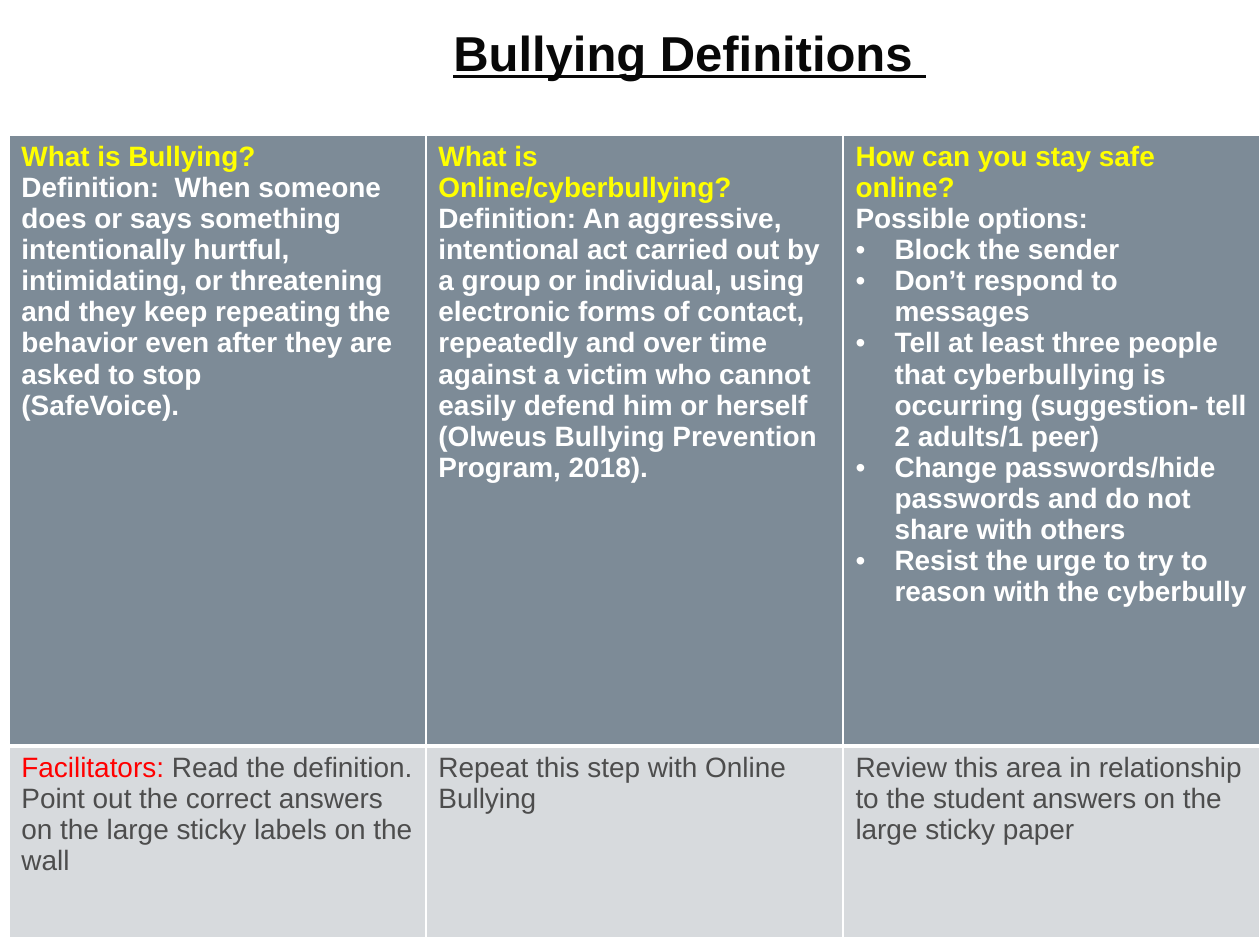
from dataclasses import dataclass

from lxml.etree import SubElement as Sub
from pptx import Presentation
from pptx.dml.color import RGBColor as Rgb
from pptx.enum.text import MSO_ANCHOR as Anchor, PP_ALIGN as Align
from pptx.oxml.ns import qn
from pptx.util import Inches, Pt

HUES = {
    "ink": "080808", "white": "FFFFFF", "yellow": "FFFF00", "red": "FF0000",
    "gray": "4D4D4D", "slate": "7D8B97", "pale": "D7DADD",
}


@dataclass
class Span:
    text: str
    hue: str


@dataclass
class Para:
    spans: list[Span]
    bullet: bool = False


@dataclass
class Band:
    height: float
    fill: str
    bold: bool
    base: float  # width of the bottom border
    cells: list[list[Para]]


def line(text: str, hue: str = "white", bullet: bool = False) -> Para:
    return Para([Span(text, hue)], bullet)


# Table wording
BANDS = [
    Band(4.85, "slate", True, 3, [
        [
            line("What is Bullying?", "yellow"),
            line("Definition:  When someone does or says something intentionally "
                 "hurtful, intimidating, or threatening and they keep repeating "
                 "the behavior even after they are asked to stop"),
            line("(SafeVoice)."),
        ],
        [
            line("What is Online/cyberbullying?", "yellow"),
            line("Definition: An aggressive, intentional act carried out by a "
                 "group or individual, using electronic forms of contact, "
                 "repeatedly and over time against a victim who cannot easily "
                 "defend him or herself"),
            line("(Olweus Bullying Prevention Program, 2018)."),
        ],
        [
            line("How can you stay safe online?", "yellow"),
            line("Possible options:"),
            *(line(tip, bullet=True) for tip in (
                "Block the sender",
                "Don’t respond to messages",
                "Tell at least three people that cyberbullying is occurring "
                "(suggestion- tell 2 adults/1 peer)",
                "Change passwords/hide passwords and do not share with others",
                "Resist the urge to try to reason with the cyberbully",
            )),
        ],
    ]),
    Band(1.52, "pale", False, 1, [
        [Para([
            Span("Facilitators: ", "red"),
            Span("Read the definition. Point out the correct answers on the "
                 "large sticky labels on the wall", "gray"),
        ])],
        [line("Repeat this step with Online Bullying", "gray")],
        [line("Review this area in relationship to the student answers on the "
              "large sticky paper", "gray")],
    ]),
]


def style(font, hue: str, **form) -> None:
    for key, value in {"name": "Arial", **form}.items():
        setattr(font, key, value)
    font.color.rgb = Rgb.from_string(HUES[hue])


def edge(cell, base: float) -> None:
    props = cell._tc.get_or_add_tcPr()
    for side, width in {"L": 1, "R": 1, "T": 1, "B": base}.items():
        rule = Sub(props, qn(f"a:ln{side}"), w=str(Pt(width)))
        fill = Sub(rule, qn("a:solidFill"))
        Sub(fill, qn("a:srgbClr"), val=HUES["white"])


def dot(para) -> None:
    props = para._p.get_or_add_pPr()
    indent = Inches(0.31)
    props.set("marL", str(indent))
    props.set("indent", str(-indent))
    Sub(props, qn("a:buFont"), typeface="Arial")
    Sub(props, qn("a:buChar"), char="•")


def write(cell, paras: list[Para], bold: bool) -> None:
    frame = cell.text_frame
    for i, item in enumerate(paras):
        para = frame.add_paragraph() if i else frame.paragraphs[0]
        if item.bullet:
            dot(para)
        for span in item.spans:
            run = para.add_run()
            run.text = span.text
            style(run.font, span.hue, size=Pt(16), bold=bold)


def add_title(slide) -> None:
    title = slide.shapes.title
    box = {"left": 2.09, "top": 0.13, "width": 6.77, "height": 0.56}
    for key, value in box.items():
        setattr(title, key, Inches(value))
    frame = title.text_frame
    frame.vertical_anchor = Anchor.MIDDLE
    para = frame.paragraphs[0]
    para.alignment = Align.CENTER
    run = para.add_run()
    run.text = "Bullying Definitions "
    style(run.font, "ink", size=Pt(28), bold=True, underline=True)


def add_grid(slide) -> None:
    count = len(BANDS[0].cells)
    wide = Inches(3.31)
    high = Inches(sum(band.height for band in BANDS))
    table = slide.shapes.add_table(
        len(BANDS), count, Inches(0.07), Inches(1.07), wide * count, high).table
    table.first_row = table.horz_banding = False
    for col in table.columns:
        col.width = wide
    for r, band in enumerate(BANDS):
        table.rows[r].height = Inches(band.height)
        for c, paras in enumerate(band.cells):
            cell = table.cell(r, c)
            edge(cell, band.base)
            cell.fill.solid()
            cell.fill.fore_color.rgb = Rgb.from_string(HUES[band.fill])
            write(cell, paras, band.bold)


def main() -> None:
    deck = Presentation()
    deck.slide_width, deck.slide_height = Inches(10), Inches(7.5)
    slide = deck.slides.add_slide(deck.slide_layouts[5])
    add_title(slide)
    add_grid(slide)
    deck.save("out.pptx")


if __name__ == "__main__":
    main()
